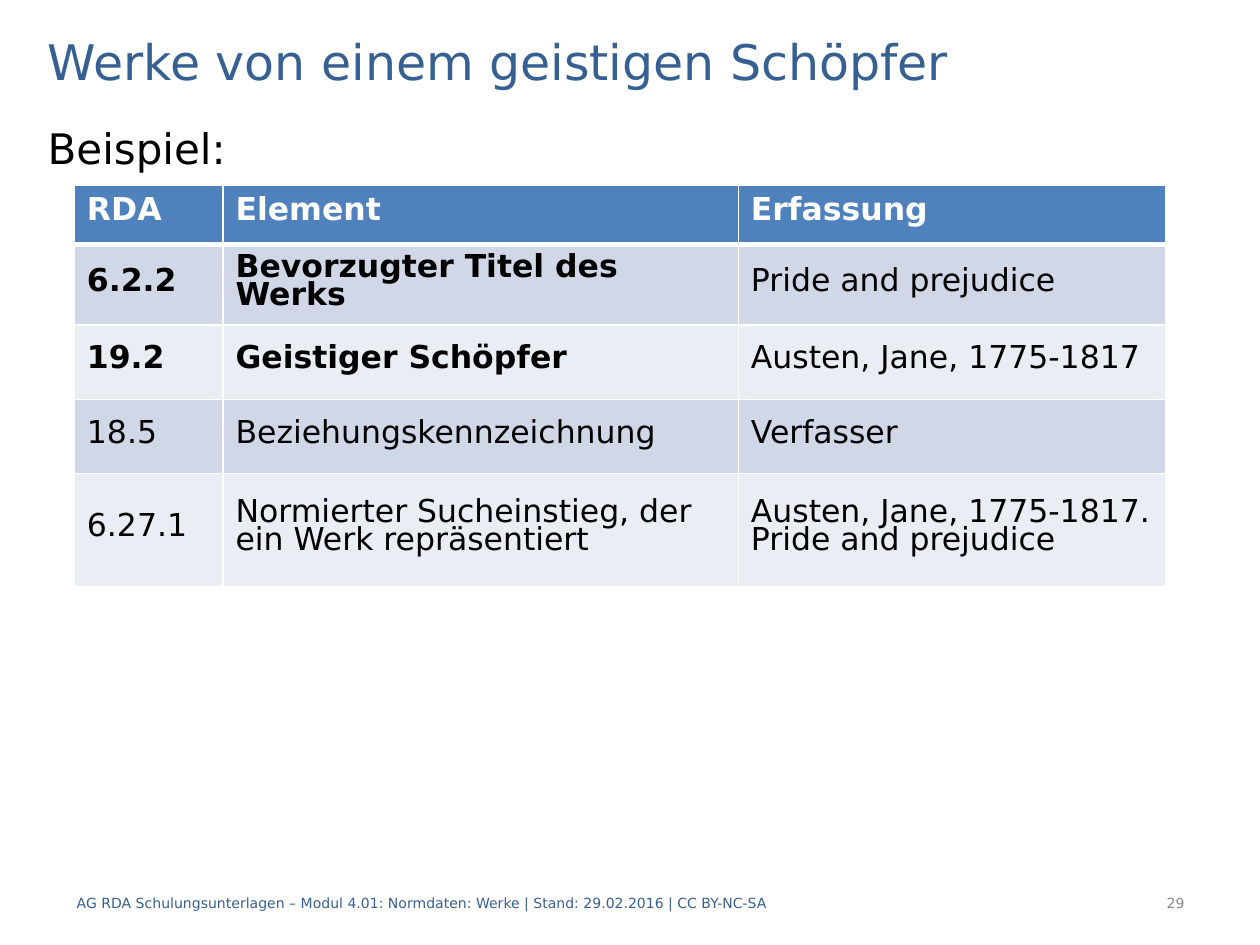
from lxml.etree import SubElement
from pptx import Presentation
from pptx.dml.color import RGBColor
from pptx.enum.text import MSO_ANCHOR, PP_ALIGN
from pptx.oxml.ns import qn
from pptx.util import Inches, Pt

FONT = "DejaVu Sans"
BLUE = RGBColor(0x37, 0x60, 0x92)
HEADER_BLUE = RGBColor(0x4F, 0x81, 0xBD)
BAND_DARK = RGBColor(0xD0, 0xD8, 0xE8)
BAND_LIGHT = RGBColor(0xE9, 0xED, 0xF4)
GRAY = RGBColor(0x89, 0x89, 0x89)
BLACK = RGBColor(0, 0, 0)
WHITE = RGBColor(0xFF, 0xFF, 0xFF)

# Content
TITLE = "Werke von einem geistigen Schöpfer"
INTRO = "Beispiel:"
FOOTER = ("AG RDA Schulungsunterlagen – Modul 4.01: Normdaten: Werke"
          " | Stand: 29.02.2016 | CC BY-NC-SA")
PAGE_NUMBER = "29"
ROWS = [
    ("RDA", "Element", "Erfassung"),
    ("6.2.2", "Bevorzugter Titel des Werks", "Pride and prejudice"),
    ("19.2", "Geistiger Schöpfer", "Austen, Jane, 1775-1817"),
    ("18.5", "Beziehungskennzeichnung", "Verfasser"),
    ("6.27.1", "Normierter Sucheinstieg, der ein Werk repräsentiert",
     "Austen, Jane, 1775-1817. Pride and prejudice"),
]
CORE_ELEMENTS = {"6.2.2", "19.2"}  # set in bold
COLUMN_WIDTHS = [1.18, 4.09, 3.39]
ROW_HEIGHTS = [0.47, 0.64, 0.59, 0.59, 0.9]


def write(frame, text, size, color, bold=False, align=PP_ALIGN.LEFT):
    frame.word_wrap = True
    para = frame.paragraphs[0]
    para.text = text
    para.alignment = align
    para.font.name = FONT
    para.font.size = Pt(size)
    para.font.bold = bold
    para.font.color.rgb = color
    return para


def add_text(page, place, text, size, color, anchor, align=PP_ALIGN.LEFT):
    box = page.shapes.add_textbox(*map(Inches, place))
    box.text_frame.vertical_anchor = anchor
    write(box.text_frame, text, size, color, align=align)


def set_borders(cell, bottom_width):
    properties = cell._tc.get_or_add_tcPr()
    widths = {"a:lnL": 1, "a:lnR": 1, "a:lnT": 1, "a:lnB": bottom_width}
    for position, (tag, width) in enumerate(widths.items()):
        line = SubElement(properties, qn(tag), w=str(Pt(width)))
        fill = SubElement(line, qn("a:solidFill"))
        SubElement(fill, qn("a:srgbClr"), val=str(WHITE))
        properties.insert(position, line)  # borders precede the fill


def add_rda_table(page):
    frame = page.shapes.add_table(
        len(ROWS), len(COLUMN_WIDTHS), Inches(0.59), Inches(1.47),
        Inches(sum(COLUMN_WIDTHS)), Inches(sum(ROW_HEIGHTS)))
    table = frame.table
    for column, width in zip(table.columns, COLUMN_WIDTHS):
        column.width = Inches(width)
    for row, height in zip(table.rows, ROW_HEIGHTS):
        row.height = Inches(height)

    for row_index, texts in enumerate(ROWS):
        header = row_index == 0
        core = texts[0] in CORE_ELEMENTS
        band = BAND_DARK if row_index % 2 else BAND_LIGHT
        for column_index, text in enumerate(texts):
            cell = table.cell(row_index, column_index)
            cell.fill.solid()
            cell.fill.fore_color.rgb = HEADER_BLUE if header else band
            bold = header or (core and column_index < 2)
            para = write(cell.text_frame, text, 18,
                         WHITE if header else BLACK, bold)
            if not header:
                cell.vertical_anchor = MSO_ANCHOR.MIDDLE
                para.line_spacing = Pt(16)
                para.space_before = para.space_after = Pt(6)
            set_borders(cell, 3 if header else 1)


def main():
    deck = Presentation()
    deck.slide_width, deck.slide_height = Inches(10), Inches(7.5)
    page = deck.slides.add_slide(deck.slide_layouts[5])

    # Title
    title = page.shapes.title
    title.left, title.top = Inches(0.28), Inches(0.2)
    title.width, title.height = Inches(9.45), Inches(0.56)
    title.text_frame.vertical_anchor = MSO_ANCHOR.MIDDLE
    write(title.text_frame, TITLE, 28, BLUE)

    # Body
    add_text(page, (0.28, 0.92, 9.45, 5.98), INTRO, 24, BLACK, MSO_ANCHOR.TOP)
    add_rda_table(page)

    # Footer
    add_text(page, (0.51, 6.97, 6.69, 0.4), FOOTER, 8, BLUE, MSO_ANCHOR.MIDDLE)
    add_text(page, (7.91, 6.97, 1.59, 0.4), PAGE_NUMBER, 8, GRAY,
             MSO_ANCHOR.MIDDLE, PP_ALIGN.RIGHT)

    deck.save("out.pptx")


if __name__ == "__main__":
    main()
